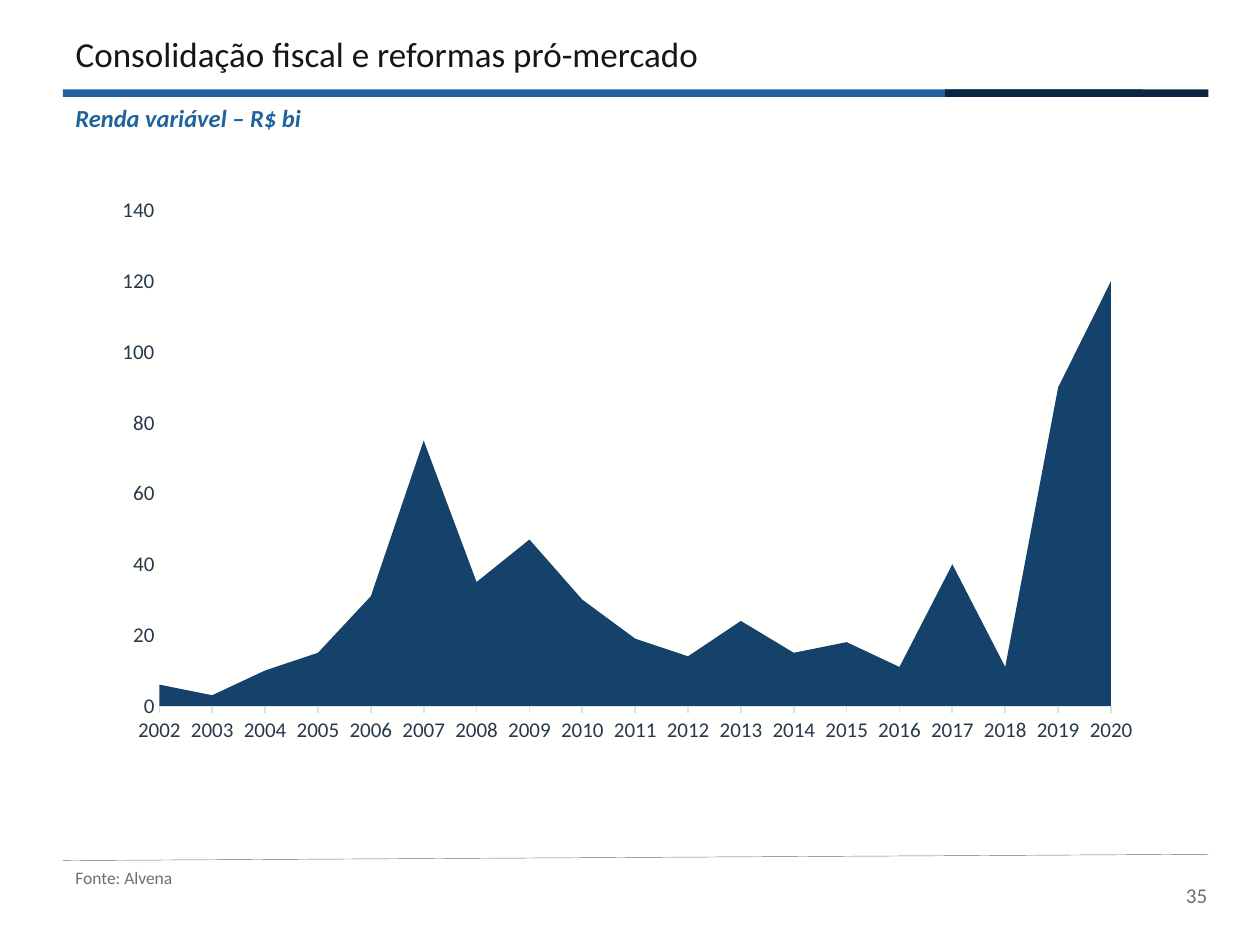
from dataclasses import dataclass

from lxml import etree
from pptx import Presentation
from pptx import util as u
from pptx.chart import data as chart_data
from pptx.dml.color import RGBColor
from pptx.enum import chart as charts, shapes, text
from pptx.oxml.ns import qn


@dataclass(frozen=True)
class Theme:
    font: str = "Calibri"
    background: str = "FFFFFE"
    ink: str = "161616"
    blue: str = "1F639E"
    navy: str = "0B2543"
    grey: str = "6D706D"
    area: str = "15426A"
    label: str = "27384B"
    axis: str = "D8E1EB"
    title_size: int = 20
    subtitle_size: int = 14
    label_size: int = 12
    source_size: int = 10


class SlideBuilder:
    COLUMNS, ROWS = 100, 75

    def __init__(self, presentation, theme):
        self.theme = theme
        self.column = presentation.slide_width / self.COLUMNS
        self.row = presentation.slide_height / self.ROWS
        self.slide = presentation.slides.add_slide(presentation.slide_layouts[5])
        self.paint(self.slide.background.fill, theme.background)

    def paint(self, fill, color):
        fill.solid()
        fill.fore_color.rgb = RGBColor.from_string(color)

    def grid(self, left, top, width, height):
        return (u.Emu(round(left * self.column)), u.Emu(round(top * self.row)),
                u.Emu(round(width * self.column)), u.Emu(round(height * self.row)))

    def style_font(self, font, size, color, bold=False, italic=False):
        font.name, font.size = self.theme.font, u.Pt(size)
        font.bold, font.italic = bold, italic
        font.color.rgb = RGBColor.from_string(color)

    def set_text(self, shape, wording, size, color, anchor=text.MSO_ANCHOR.TOP,
                 align=text.PP_ALIGN.LEFT, spacing=0.8, before=0, **emphasis):
        frame = shape.text_frame
        frame.word_wrap = True
        frame.auto_size = text.MSO_AUTO_SIZE.NONE
        frame.vertical_anchor = anchor
        paragraph = frame.paragraphs[0]
        paragraph.alignment = align
        paragraph.line_spacing = spacing
        paragraph.space_before = u.Pt(before)
        run = paragraph.add_run()
        run.text = wording
        self.style_font(run.font, size, color, **emphasis)

    def title(self, box, wording):
        shape = self.slide.shapes.title
        shape.left, shape.top, shape.width, shape.height = self.grid(*box)
        self.set_text(shape, wording, self.theme.title_size, self.theme.ink,
                      anchor=text.MSO_ANCHOR.BOTTOM)

    def label(self, box, wording, size, color, **style):
        shape = self.slide.shapes.add_textbox(*self.grid(*box))
        self.set_text(shape, wording, size, color, **style)

    def bar(self, box, color):
        shape = self.slide.shapes.add_shape(shapes.MSO_SHAPE.RECTANGLE, *self.grid(*box))
        shape.shadow.inherit = False
        self.paint(shape.fill, color)
        shape.line.fill.background()

    def rule(self, start, end, color, weight):
        line = self.slide.shapes.add_connector(
            shapes.MSO_CONNECTOR.STRAIGHT, *self.grid(*start, *end))
        line.line.color.rgb = RGBColor.from_string(color)
        line.line.width = u.Pt(weight)
        etree.SubElement(line._element.spPr, qn("a:effectLst"))

    def area_chart(self, box, categories, values, plot_box):
        data = chart_data.CategoryChartData(number_format="#,##0")
        data.categories = categories
        data.add_series("Series 1", values)
        chart = self.slide.shapes.add_chart(
            charts.XL_CHART_TYPE.AREA_STACKED, *self.grid(*box), data).chart
        chart.has_legend = chart.has_title = False
        self.style_font(chart.font, self.theme.label_size, self.theme.label)
        self.paint(chart.plots[0].series[0].format.fill, self.theme.area)

        category_axis, value_axis = chart.category_axis, chart.value_axis
        for axis in (category_axis, value_axis):
            axis.has_major_gridlines = False
            axis.minor_tick_mark = charts.XL_TICK_MARK.NONE
        category_axis.major_tick_mark = charts.XL_TICK_MARK.OUTSIDE
        category_axis.format.line.color.rgb = RGBColor.from_string(self.theme.axis)
        category_axis.format.line.width = u.Pt(1)
        value_axis.major_tick_mark = charts.XL_TICK_MARK.NONE
        value_axis.format.line.fill.background()
        value_axis.minimum_scale, value_axis.maximum_scale = 0, 140
        value_axis.major_unit = 20
        value_axis.tick_labels.number_format = "#,##0"
        value_axis.tick_labels.number_format_is_linked = False
        value_axis._element.find(qn("c:crossBetween")).set("val", "midCat")
        self.place_plot(chart, plot_box)

    def place_plot(self, chart, plot_box):
        plot_area = chart._chartSpace.chart.plotArea
        layout = plot_area.find(qn("c:layout"))
        if layout is None:
            layout = etree.Element(qn("c:layout"))
            plot_area.insert(0, layout)
        manual = etree.SubElement(layout, qn("c:manualLayout"))
        settings = [("layoutTarget", "inner"), ("xMode", "edge"), ("yMode", "edge"),
                    *zip("xywh", plot_box)]
        for name, value in settings:
            etree.SubElement(manual, qn(f"c:{name}")).set("val", str(value))


def main():
    presentation = Presentation()
    presentation.slide_width, presentation.slide_height = u.Inches(10), u.Inches(7.5)
    theme = Theme()
    builder = SlideBuilder(presentation, theme)

    builder.label((90.7, 69.9, 6.1, 4), "35", theme.label_size, theme.grey,
                  align=text.PP_ALIGN.RIGHT)
    builder.bar((5, 7.1, 85.7, 0.6), theme.blue)
    builder.bar((75, 7.1, 20.9, 0.6), theme.navy)
    builder.rule((5, 68.3), (95.9, 67.8), theme.grey, 0.25)
    builder.title((5, 1.8, 65.6, 4.6), "Consolidação fiscal e reformas pró-mercado")
    builder.label((5, 68.3, 18.8, 3.6), "Fonte: Alvena", theme.source_size, theme.grey,
                  spacing=1)
    builder.label((5, 8.1, 74.6, 3.1), "Renda variável – R$ bi", theme.subtitle_size,
                  theme.blue, before=2.8, bold=True, italic=True)
    builder.area_chart(
        (8.5, 14.9, 83, 45.2),
        [str(year) for year in range(2002, 2021)],
        [6, 3, 10, 15, 31, 75, 35, 47, 30, 19, 14, 24, 15, 18, 11, 40, 11, 90, 120],
        (0.05, 0.04, 0.91, 0.87))
    presentation.save("out.pptx")


if __name__ == "__main__":
    main()
